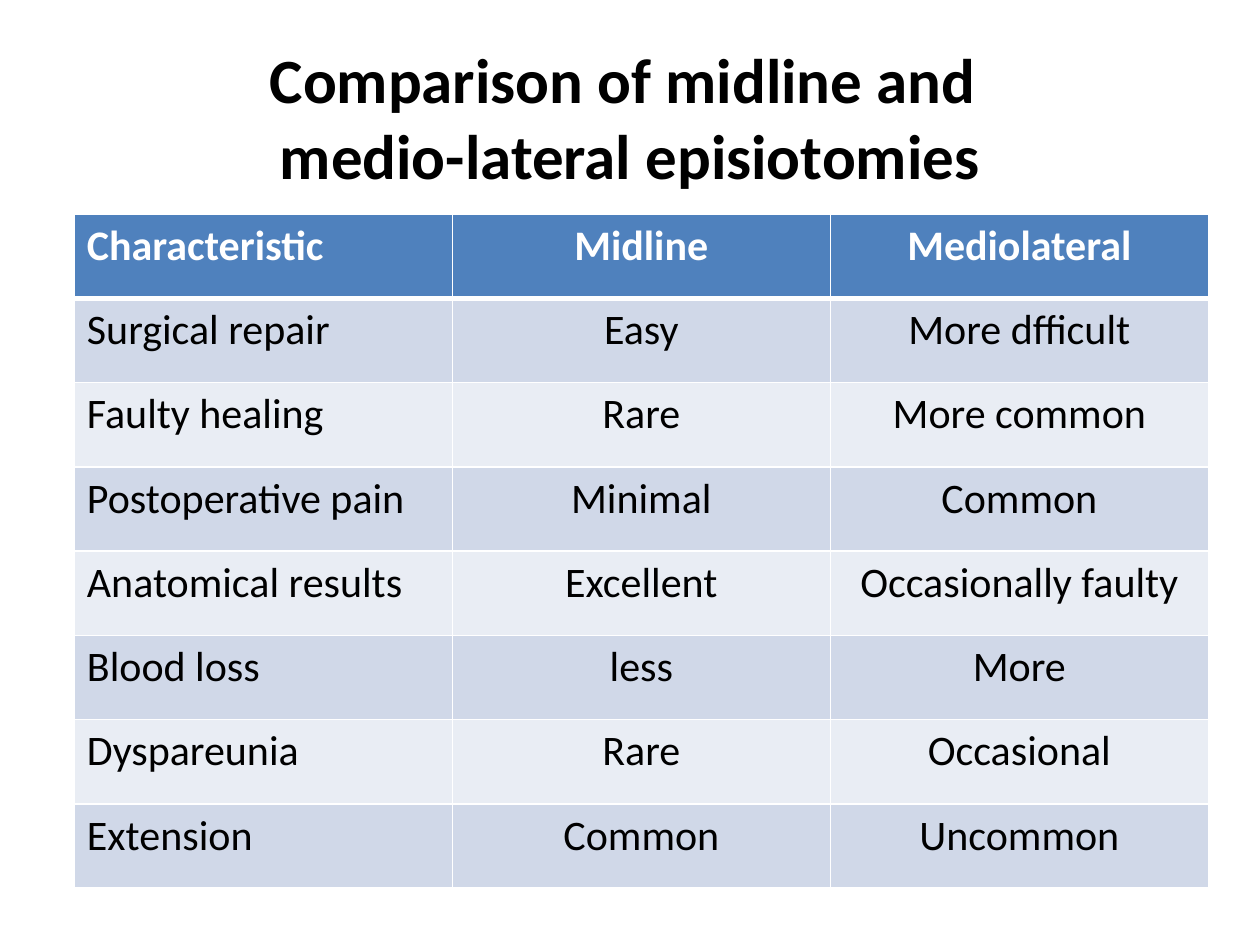
from lxml import etree
from pptx import Presentation
from pptx import util as u
from pptx.dml.color import RGBColor
from pptx.enum import text
from pptx.oxml.ns import qn

FONT = "Calibri"
BLACK = RGBColor(0x00, 0x00, 0x00)
WHITE = RGBColor(0xFF, 0xFF, 0xFF)
HEADER_BLUE = RGBColor(0x4F, 0x81, 0xBD)
BAND_DARK = RGBColor(0xD0, 0xD8, 0xE8)
BAND_LIGHT = RGBColor(0xE9, 0xED, 0xF4)

# The first line's closing space belongs to the centred wording
TITLE_LINES = ["Comparison of midline and ", "medio-lateral episiotomies"]
COMPARISON = [
    ("Characteristic", "Midline", "Mediolateral"),
    ("Surgical repair", "Easy", "More dfficult"),
    ("Faulty healing", "Rare", "More common"),
    ("Postoperative pain", "Minimal", "Common"),
    ("Anatomical results", "Excellent", "Occasionally faulty"),
    ("Blood loss", "less", "More"),
    ("Dyspareunia", "Rare", "Occasional"),
    ("Extension", "Common", "Uncommon"),
]


def add_run(paragraph, wording, size, color, bold):
    run = paragraph.add_run()
    run.text = wording
    run.font.name = FONT
    run.font.size = u.Pt(size)
    run.font.bold = bold
    run.font.color.rgb = color


def add_title(slide, left, top, width, height):
    frame = slide.shapes.add_textbox(left, top, width, height).text_frame
    frame.word_wrap = True
    frame.vertical_anchor = text.MSO_ANCHOR.MIDDLE
    paragraph = frame.paragraphs[0]
    paragraph.alignment = text.PP_ALIGN.CENTER
    for index, line in enumerate(TITLE_LINES):
        if index:
            paragraph.add_line_break()
        add_run(paragraph, line, 36, BLACK, True)


def set_borders(cell, widths):
    """Draw white cell borders; widths are points keyed by side."""
    properties = cell._tc.get_or_add_tcPr()
    for side in ("L", "R", "T", "B"):
        line = etree.SubElement(properties, qn(f"a:ln{side}"), w=str(u.Pt(widths[side])))
        fill = etree.SubElement(line, qn("a:solidFill"))
        etree.SubElement(fill, qn("a:srgbClr"), val=str(WHITE))


def add_comparison_table(slide, left, top, width, height):
    row_count, column_count = len(COMPARISON), len(COMPARISON[0])
    table = slide.shapes.add_table(row_count, column_count, left, top, width, height).table
    for column in table.columns:
        column.width = width // column_count
    for row in table.rows:
        row.height = height // row_count

    for row_index, values in enumerate(COMPARISON):
        is_header = row_index == 0
        band = BAND_DARK if row_index % 2 else BAND_LIGHT
        widths = {"L": 1, "R": 1, "T": 3 if row_index == 1 else 1, "B": 3 if is_header else 1}
        for column_index, value in enumerate(values):
            cell = table.cell(row_index, column_index)
            set_borders(cell, widths)
            cell.fill.solid()
            cell.fill.fore_color.rgb = HEADER_BLUE if is_header else band
            paragraph = cell.text_frame.paragraphs[0]
            paragraph.alignment = text.PP_ALIGN.CENTER if column_index else text.PP_ALIGN.LEFT
            add_run(paragraph, value, 24, WHITE if is_header else BLACK, is_header)


def main():
    presentation = Presentation()
    presentation.slide_width = u.Inches(10)
    presentation.slide_height = u.Inches(7.5)
    slide = presentation.slides.add_slide(presentation.slide_layouts[6])

    # Heading
    add_title(slide, u.Inches(0.5), u.Inches(0.3), u.Inches(9), u.Inches(1.25))
    # Comparison grid
    add_comparison_table(slide, u.Inches(0.59), u.Inches(1.7), u.Inches(9), u.Inches(5.35))

    presentation.save("out.pptx")


if __name__ == "__main__":
    main()
